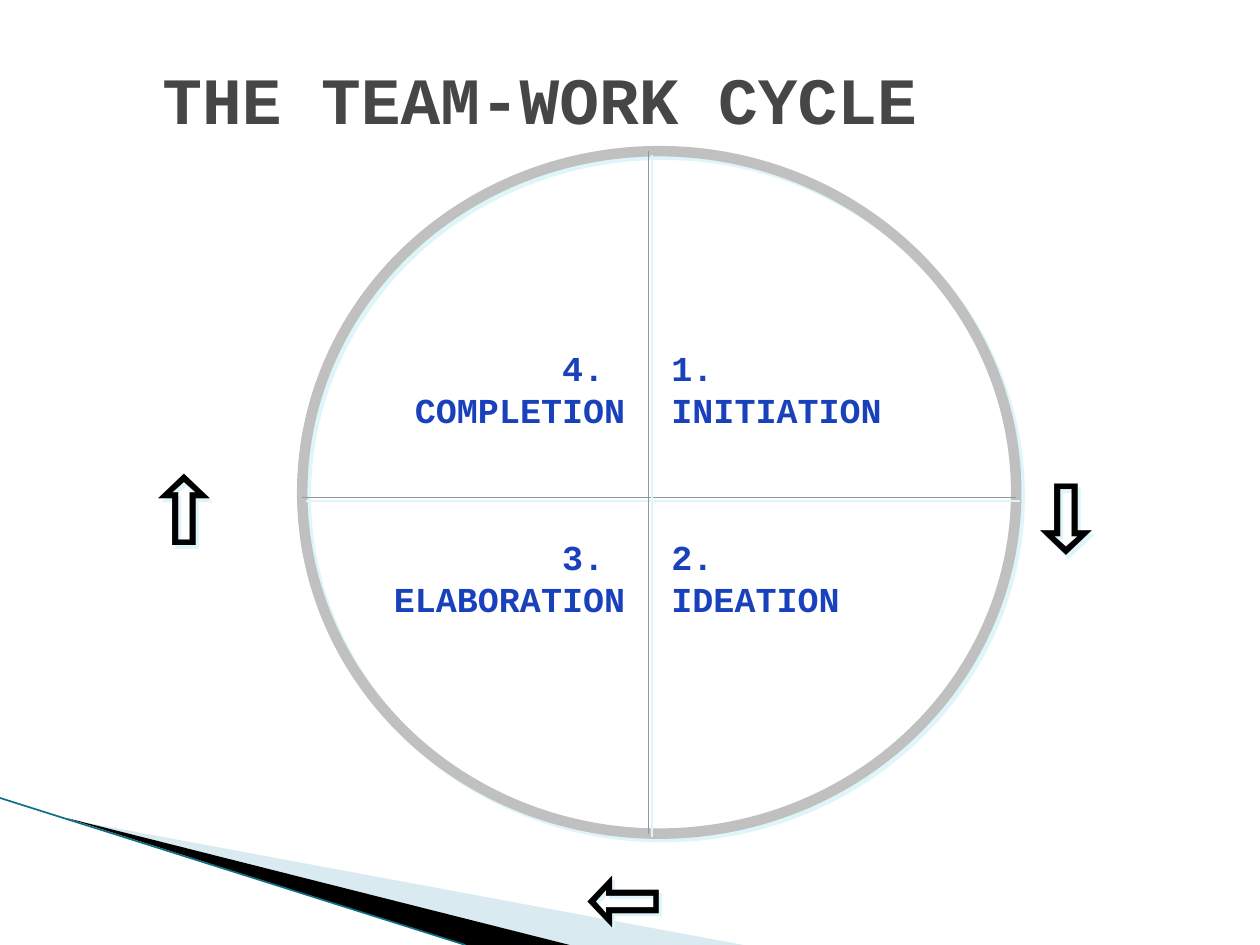
from dataclasses import dataclass

from lxml.etree import SubElement
from pptx import Presentation
from pptx.dml.color import RGBColor
from pptx.enum.shapes import MSO_CONNECTOR, MSO_SHAPE
from pptx.enum.text import MSO_ANCHOR, PP_ALIGN
from pptx.oxml.ns import qn
from pptx.util import Pt


@dataclass(frozen=True)
class Theme:
    """Colours, font and type sizes of the slide."""
    font: str = "Courier New"
    title: str = "464646"
    label: str = "1A41BC"
    black: str = "000000"
    ring: str = "C0C0C0"
    divider: str = "969696"
    shadow: str = "DEF5FA"
    wedge: str = "A0CBDC"
    edge: str = "0F6F83"
    title_size: float = 37.8
    label_size: float = 20
    arrow_size: float = 72


THEME = Theme()


def set_shadow(shape, visible=True):
    """Give a shape the offset shadow, or none at all."""
    properties = shape._element.spPr
    for old in properties.findall(qn("a:effectLst")):
        properties.remove(old)
    effects = SubElement(properties, qn("a:effectLst"))
    if visible:
        shadow = SubElement(effects, qn("a:outerShdw"), dist=str(Pt(2.8)),
                            dir="2700000", algn="ctr", rotWithShape="0")
        SubElement(shadow, qn("a:srgbClr"), val=THEME.shadow)


def add_line(slide, start, end, color, width, shadow=True):
    """Draw a straight line between two points."""
    line = slide.shapes.add_connector(
        MSO_CONNECTOR.STRAIGHT, *(Pt(value) for value in (*start, *end)))
    line.line.color.rgb = RGBColor.from_string(color)
    line.line.width = Pt(width)
    set_shadow(line, shadow)


def add_wedge(slide, points, color, opacity=100):
    """Draw a filled triangle."""
    first, *others = [(Pt(x), Pt(y)) for x, y in points]
    builder = slide.shapes.build_freeform(*first)
    builder.add_line_segments(others, close=True)
    shape = builder.convert_to_shape()
    shape.fill.solid()
    shape.fill.fore_color.rgb = RGBColor.from_string(color)
    shape.line.fill.background()
    shape.shadow.inherit = False
    if opacity < 100:
        fill_color = shape._element.spPr.find(qn("a:solidFill"))[0]
        SubElement(fill_color, qn("a:alpha"), val=str(opacity * 1000))


def add_text(slide, box, lines, size, color, align=PP_ALIGN.LEFT,
             anchor=MSO_ANCHOR.TOP):
    """Place bold text whose lines are parted by line breaks."""
    shape = slide.shapes.add_textbox(*(Pt(value) for value in box))
    frame = shape.text_frame
    frame.word_wrap = True
    frame.vertical_anchor = anchor
    paragraph = frame.paragraphs[0]
    paragraph.alignment = align
    for index, line in enumerate(lines):
        if index:
            paragraph.add_line_break()
        run = paragraph.add_run()
        run.text = line
        run.font.name = THEME.font
        run.font.size = Pt(size)
        run.font.bold = True
        run.font.color.rgb = RGBColor.from_string(color)
    return shape


def add_corner(slide):
    """Draw the wedges in the lower left corner."""
    add_wedge(slide, [(39.6, 468.3), (425, 540), (325.5, 540)], THEME.wedge, 40)
    add_wedge(slide, [(38.2, 467.5), (325.5, 540), (266, 540)], THEME.black)
    add_line(slide, (0, 456), (266, 540), THEME.edge, 0.95, shadow=False)


def add_cycle(slide):
    """Draw the ring and the two lines that quarter it."""
    left, top, width, height = 172.7, 86.4, 408, 390
    ring = slide.shapes.add_shape(
        MSO_SHAPE.OVAL, Pt(left), Pt(top), Pt(width), Pt(height))
    ring.fill.background()
    ring.line.color.rgb = RGBColor.from_string(THEME.ring)
    ring.line.width = Pt(6)
    set_shadow(ring)
    middle_x, middle_y = 370.6, 284.4
    add_line(slide, (left, middle_y), (left + width, middle_y),
             THEME.divider, 0.75)
    add_line(slide, (middle_x, top), (middle_x, top + height),
             THEME.divider, 0.75)


def add_stages(slide):
    """Label the four quarters around the centre."""
    right_side, left_edge, upper, lower = 376.6, 364.4, 194.4, 302.4
    width, height = 240, 55.7
    stages = [
        ("1. ", "INITIATION", right_side, upper, PP_ALIGN.LEFT),
        ("2. ", "IDEATION", right_side, lower, PP_ALIGN.LEFT),
        ("3. ", "ELABORATION", left_edge - width, lower, PP_ALIGN.RIGHT),
        ("4. ", "COMPLETION", left_edge - width, upper, PP_ALIGN.RIGHT),
    ]
    for number, name, left, top, align in stages:
        add_text(slide, (left, top, width, height), (number, name),
                 THEME.label_size, THEME.label, align)


def add_arrows(slide):
    """Place the arrow characters around the ring."""
    arrows = [("⇧", 76.4, 236.4, 102), ("⇩", 580.4, 242, 72),
              ("⇦", 328.4, 459.4, 120)]
    for character, left, top, width in arrows:
        arrow = add_text(slide, (left, top, width, 93.6), (character,),
                         THEME.arrow_size, THEME.black)
        set_shadow(arrow)


def main():
    """Build the team-work cycle slide."""
    presentation = Presentation()
    presentation.slide_width = Pt(720)
    presentation.slide_height = Pt(540)
    slide = presentation.slides.add_slide(presentation.slide_layouts[6])
    add_corner(slide)
    add_text(slide, (85.7, 27.4, 630, 57), ("THE TEAM-WORK CYCLE",),
             THEME.title_size, THEME.title, anchor=MSO_ANCHOR.MIDDLE)
    add_cycle(slide)
    add_stages(slide)
    add_arrows(slide)
    presentation.save("out.pptx")


if __name__ == "__main__":
    main()
